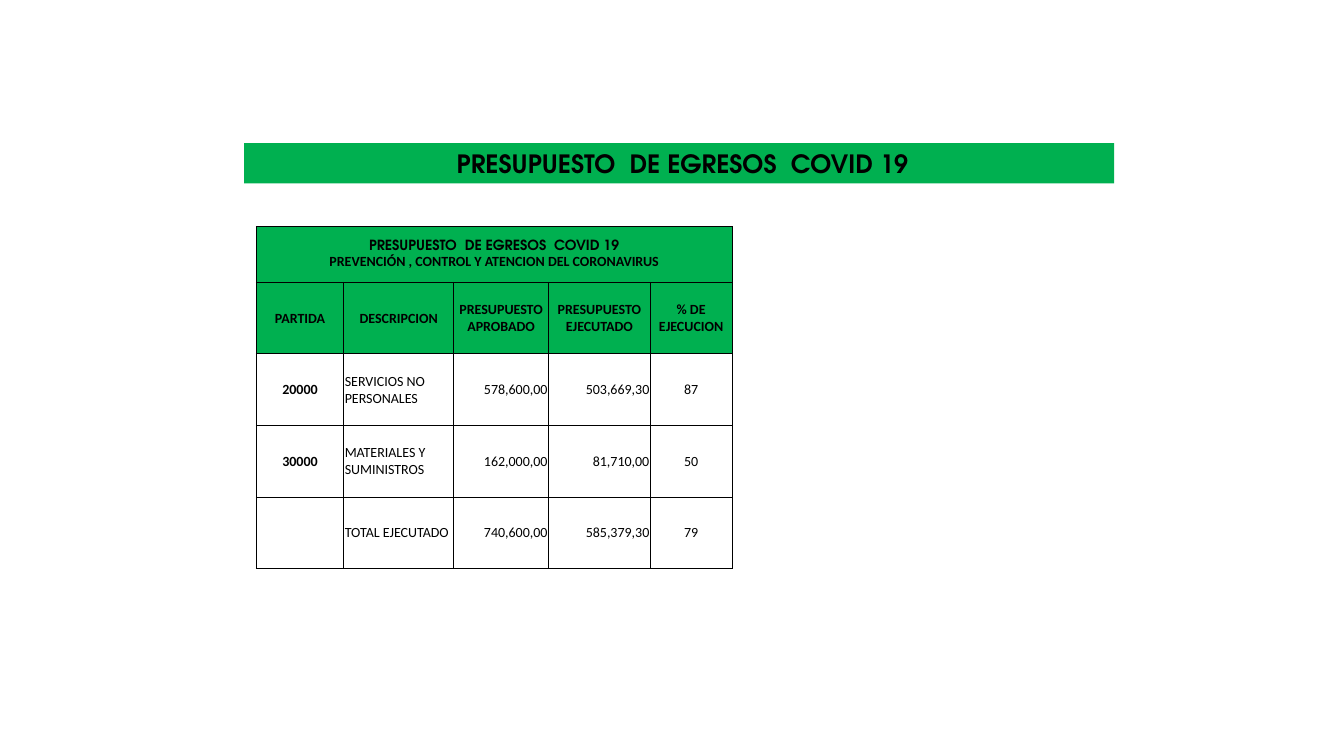
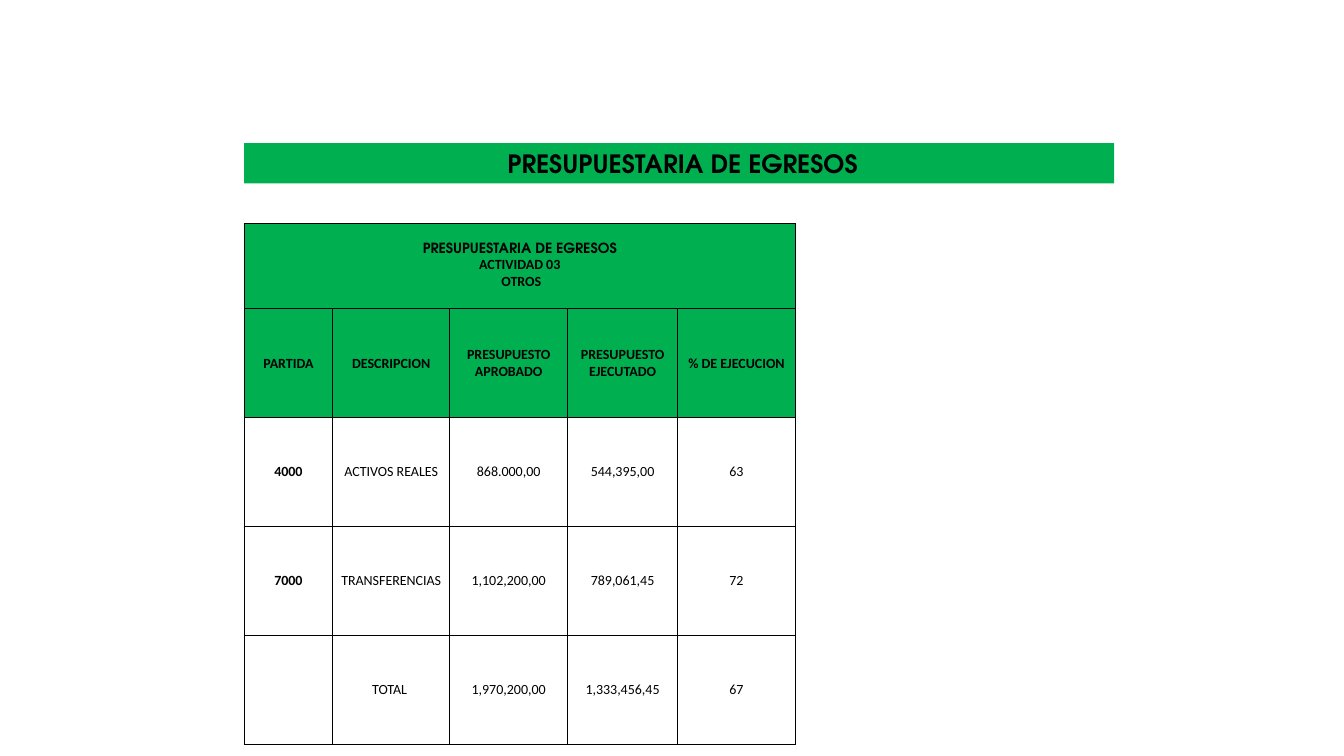
"""Build two budget slides, each with a green title band and a table."""
import dataclasses

import lxml.etree
import pptx
import pptx.dml.color
import pptx.enum.text
import pptx.oxml.ns
import pptx.presentation
import pptx.table
import pptx.text.text
import pptx.util

GREEN = "00B050"
BLACK = "000000"
TITLE_FONT = "TeX Gyre Adventor"
BODY_FONT = "Calibri"
HEADINGS = (
    "PARTIDA",
    "DESCRIPCION",
    "PRESUPUESTO APROBADO",
    "PRESUPUESTO EJECUTADO",
    "% DE EJECUCION",
)
Inches = pptx.util.Inches
Align = pptx.enum.text.PP_ALIGN
Anchor = pptx.enum.text.MSO_ANCHOR


@dataclasses.dataclass(frozen=True)
class BudgetSlide:
    """Title, table geometry and figures of one budget slide."""

    title: str
    caption: tuple[str, ...]
    left: float
    top: float
    column_widths: tuple[float, ...]
    caption_height: float
    row_height: float
    alignments: tuple[Align, ...]
    records: tuple[tuple[str, ...], ...]


BUDGET_SLIDES = (
    BudgetSlide(
        title=" PRESUPUESTO  DE EGRESOS  COVID 19",
        caption=(
            "PRESUPUESTO  DE EGRESOS  COVID 19",
            "PREVENCIÓN , CONTROL Y ATENCION DEL CORONAVIRUS",
        ),
        left=2.54,
        top=2.25,
        column_widths=(0.87, 1.09, 0.94, 1.01, 0.81),
        caption_height=0.55,
        row_height=0.71,
        alignments=(Align.CENTER, Align.LEFT, Align.RIGHT, Align.RIGHT, Align.CENTER),
        records=(
            ("20000", "SERVICIOS NO PERSONALES", "578,600,00", "503,669,30", "87"),
            ("30000", "MATERIALES Y SUMINISTROS", "162,000,00", "81,710,00", "50"),
            ("", "TOTAL EJECUTADO", "740,600,00", "585,379,30", "79"),
        ),
    ),
    BudgetSlide(
        title=" PRESUPUESTARIA DE EGRESOS",
        caption=("PRESUPUESTARIA DE EGRESOS", "ACTIVIDAD 03", " OTROS"),
        left=2.42,
        top=2.22,
        column_widths=(0.88, 1.16, 1.17, 1.09, 1.17),
        caption_height=0.84,
        row_height=1.08,
        alignments=(Align.CENTER,) * 5,
        records=(
            ("4000", "ACTIVOS REALES", "868.000,00", "544,395,00", "63"),
            ("7000", "TRANSFERENCIAS", "1,102,200,00", "789,061,45", "72"),
            ("", "TOTAL ", "1,970,200,00", "1,333,456,45", "67"),
        ),
    ),
)


def rgb(color: str) -> pptx.dml.color.RGBColor:
    """Turn a hex string into a colour."""
    return pptx.dml.color.RGBColor.from_string(color)


def format_paragraph(
    paragraph: pptx.text.text._Paragraph,
    size: float,
    font_name: str,
    bold: bool,
    alignment: Align,
) -> None:
    """Align a paragraph and format its runs."""
    paragraph.alignment = alignment
    for run in paragraph.runs:
        run.font.size = pptx.util.Pt(size)
        run.font.name = font_name
        run.font.bold = bold
        run.font.color.rgb = rgb(BLACK)


def add_borders(cell: pptx.table._Cell) -> None:
    """Draw thin black lines on the four sides of a cell."""
    qualified = pptx.oxml.ns.qn
    properties = cell._tc.get_or_add_tcPr()
    for side in ("lnL", "lnR", "lnT", "lnB"):
        line = lxml.etree.SubElement(
            properties, qualified(f"a:{side}"), w=str(pptx.util.Pt(0.5))
        )
        fill = lxml.etree.SubElement(line, qualified("a:solidFill"))
        lxml.etree.SubElement(fill, qualified("a:srgbClr"), val=BLACK)


def style_cell(cell: pptx.table._Cell, filled: bool) -> None:
    """Set the margins, anchor, borders and fill of a cell."""
    cell.margin_left = cell.margin_right = cell.margin_top = Inches(0.01)
    cell.margin_bottom = Inches(0)
    cell.vertical_anchor = Anchor.MIDDLE
    add_borders(cell)
    if filled:
        cell.fill.solid()
        cell.fill.fore_color.rgb = rgb(GREEN)
    else:
        cell.fill.background()


def add_title(slide: pptx.slide.Slide, text: str) -> None:
    """Turn the title placeholder into the green band."""
    title = slide.shapes.title
    title.left, title.top = Inches(2.42), Inches(1.42)
    title.width, title.height = Inches(8.63), Inches(0.4)
    title.fill.solid()
    title.fill.fore_color.rgb = rgb(GREEN)
    title.text_frame.text = text
    title.text_frame.auto_size = pptx.enum.text.MSO_AUTO_SIZE.NONE
    title.text_frame.vertical_anchor = Anchor.MIDDLE
    format_paragraph(title.text_frame.paragraphs[0], 18, TITLE_FONT, True, Align.CENTER)


def add_budget_table(slide: pptx.slide.Slide, budget: BudgetSlide) -> None:
    """Add the table with its caption, headings and records."""
    rows = (("",) * len(HEADINGS), HEADINGS, *budget.records)
    heights = (budget.caption_height,) + (budget.row_height,) * (len(rows) - 1)
    table = slide.shapes.add_table(
        len(rows),
        len(HEADINGS),
        Inches(budget.left),
        Inches(budget.top),
        Inches(sum(budget.column_widths)),
        Inches(sum(heights)),
    ).table
    table.first_row = table.horz_banding = False
    for column, width in zip(table.columns, budget.column_widths):
        column.width = Inches(width)
    for row, height in zip(table.rows, heights):
        row.height = Inches(height)

    for row_index, texts in enumerate(rows):
        is_header = row_index < 2
        for column_index, text in enumerate(texts):
            cell = table.cell(row_index, column_index)
            style_cell(cell, is_header)
            cell.text_frame.text = text
            format_paragraph(
                cell.text_frame.paragraphs[0],
                10,
                BODY_FONT,
                is_header or column_index == 0,
                Align.CENTER if is_header else budget.alignments[column_index],
            )

    caption = table.cell(0, 0)
    caption.merge(table.cell(0, len(HEADINGS) - 1))
    caption.text_frame.text = "\n".join(budget.caption)
    for index, paragraph in enumerate(caption.text_frame.paragraphs):
        font_name = BODY_FONT if index else TITLE_FONT
        format_paragraph(paragraph, 10, font_name, True, Align.CENTER)


def add_budget_slide(
    presentation: pptx.presentation.Presentation, budget: BudgetSlide
) -> None:
    """Add one slide with its title and table."""
    slide = presentation.slides.add_slide(presentation.slide_layouts[5])
    add_title(slide, budget.title)
    add_budget_table(slide, budget)


def main() -> None:
    """Build and save the presentation."""
    presentation = pptx.Presentation()
    presentation.slide_width = Inches(13.33)
    presentation.slide_height = Inches(7.5)
    for budget in BUDGET_SLIDES:
        add_budget_slide(presentation, budget)
    presentation.save("out.pptx")


if __name__ == "__main__":
    main()
